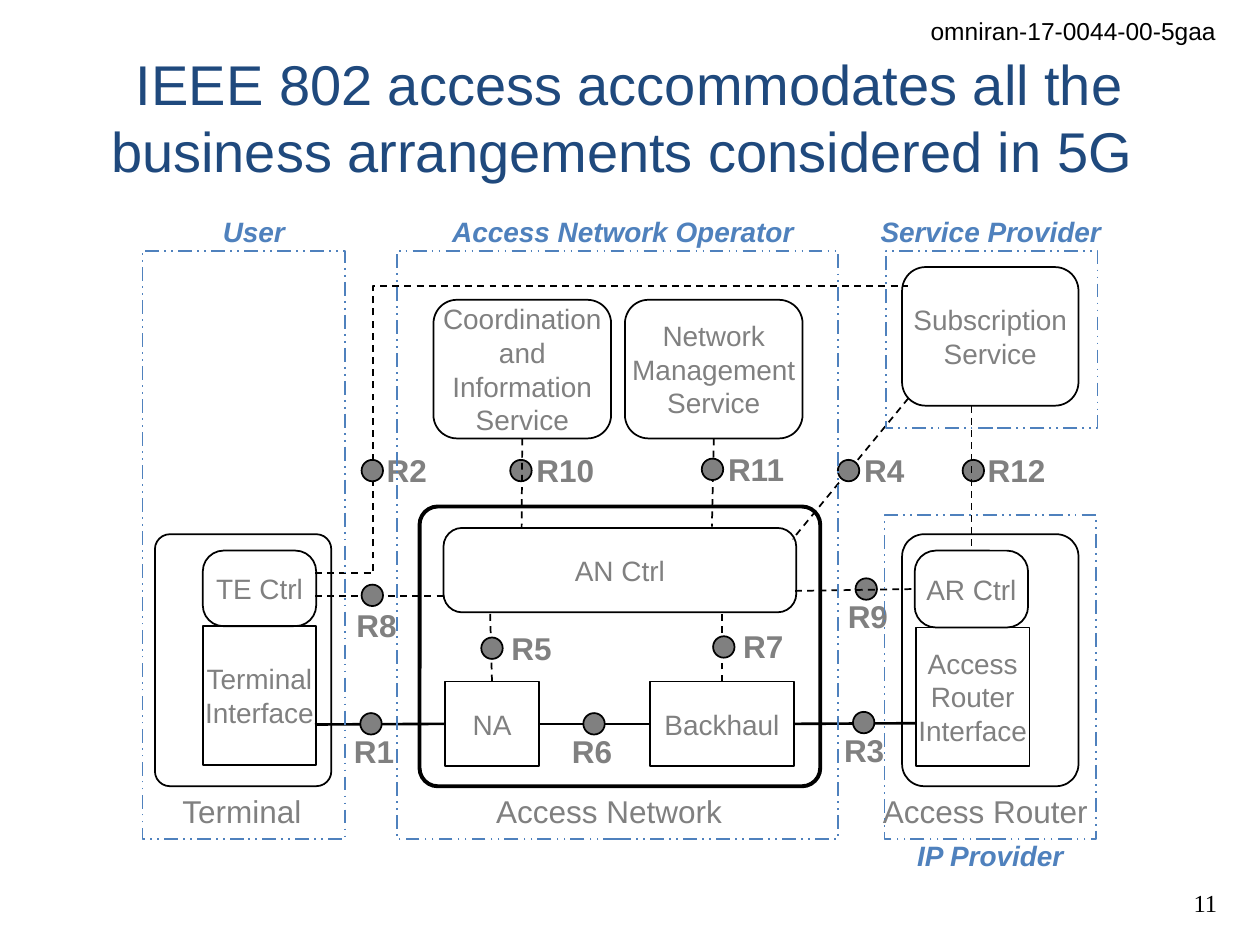
from dataclasses import dataclass
from typing import Optional

from lxml.etree import SubElement
from pptx import Presentation
from pptx.dml.color import RGBColor
from pptx.enum.dml import MSO_LINE_DASH_STYLE as Dash
from pptx.enum.shapes import MSO_CONNECTOR as Wire, MSO_SHAPE as Form
from pptx.enum.text import MSO_ANCHOR as Anchor, PP_ALIGN as Align
from pptx.oxml.ns import qn
from pptx.util import Pt

SCALE = 9144  # EMU per px, 100 px to the inch
BLACK = RGBColor(0x00, 0x00, 0x00)
GREY = RGBColor(0x80, 0x80, 0x80)
BLUE = RGBColor(0x4F, 0x81, 0xBD)
NAVY = RGBColor(0x1F, 0x49, 0x7D)
TOP, LEFT, BOTTOM, RIGHT = range(4)
DOT_SIZE = 17
LABEL_HEIGHT = 40

CAPTION = {"size": Pt(18), "color": GREY}
POINT_NAME = {**CAPTION, "bold": True}
NODE_TEXT = {"size": Pt(16), "color": GREY}
DOMAIN_NAME = {"size": Pt(16), "color": BLUE, "bold": True, "italic": True}
MARGINAL = {"size": Pt(14), "color": BLACK}


@dataclass
class Node:
    name: str
    area: tuple[int, int, int, int]
    corner: float = 0.17
    text: str = ""
    weight: float = 1


@dataclass
class Domain:
    name: str
    name_area: tuple[int, int, int, int]
    area: tuple[int, int, int, int]


@dataclass
class End:
    at: tuple[int, int]
    node: str = ""
    side: int = TOP


@dataclass
class Point:
    """A reference point: its dot, its name and the link it sits on."""
    name: str
    dot: tuple[int, int]
    label: tuple[int, int]
    start: End
    end: End
    solid: bool = False
    in_front: bool = False
    bend: Optional[float] = None


NODES = [
    Node("terminal", (123, 424, 140, 200), 0.085),
    Node("network", (333, 402, 318, 222), 0.065, weight=2.25),
    Node("router", (716, 424, 140, 200), 0.125),
    Node("terminal interface", (161, 497, 90, 110), 0, "Terminal\vInterface"),
    Node("coordination", (344, 238, 141, 110), text="Coordination and Information\vService"),
    Node("management", (496, 238, 141, 110), text="Network\vManagement\vService"),
    Node("subscription", (716, 212, 140, 110), text="Subscription\nService"),
    Node("an", (352, 419, 280, 67), 0.221, "AN Ctrl"),
    Node("te", (161, 437, 90, 60), 0.275, "TE Ctrl"),
    Node("ar", (726, 437, 90, 61), 0.275, "AR Ctrl"),
    Node("router interface", (727, 498, 90, 110), 0, "Access Router\vInterface"),
    Node("na", (353, 541, 75, 67), 0, "NA"),
    Node("backhaul", (516, 541, 114, 67), 0, "Backhaul"),
]

POINTS = [
    Point("R1", (286, 566), (271, 576), End((250, 575)), End((353, 574), "na", LEFT), solid=True),
    Point("R2", (287, 365), (297, 353), End((250, 455)), End((721, 227)), bend=0.098),
    Point("R3", (677, 565), (660, 575), End((630, 574), "backhaul", RIGHT), End((727, 574)),
          solid=True),
    Point("R4", (665, 365), (676, 353), End((721, 316)), End((629, 428))),
    Point("R5", (382, 506), (396, 494), End((390, 541), "na", TOP), End((389, 486))),
    Point("R6", (463, 566), (444, 576), End((428, 574), "na", RIGHT),
          End((516, 574), "backhaul", LEFT), solid=True),
    Point("R7", (566, 505), (580, 493), End((573, 541), "backhaul", TOP), End((573, 486))),
    Point("R8", (287, 464), (273, 476), End((250, 473)), End((352, 473))),
    Point("R9", (679, 459), (663, 469), End((631, 469)), End((726, 467), "ar", LEFT),
          in_front=True),
    Point("R10", (405, 365), (416, 353), End((415, 348), "coordination", BOTTOM),
          End((414, 419)), in_front=True),
    Point("R11", (557, 364), (568, 352), End((567, 348), "management", BOTTOM), End((565, 418))),
    Point("R12", (764, 365), (774, 353), End((771, 322)), End((771, 437), "ar", TOP),
          in_front=True),
]

DOMAINS = [
    Domain("User", (167, 165, 70, 37), (113, 199, 161, 467)),
    Domain("Access Network Operator", (349, 165, 295, 37), (315, 199, 350, 467)),
    Domain("Service Provider", (689, 165, 197, 37), (703, 199, 168, 141)),
    Domain("IP Provider", (718, 661, 138, 37), (702, 409, 168, 257)),
]

CAPTIONS = [
    ("Terminal", (135, 624, 116, LABEL_HEIGHT)),
    ("Access Network", (384, 624, 203, LABEL_HEIGHT)),
    ("Access Router", (691, 624, 184, LABEL_HEIGHT)),
]


def emu(*lengths: int) -> list[int]:
    return [length * SCALE for length in lengths]


def write(frame, text: str, style: dict, align=Align.LEFT, font_name="Arial") -> None:
    frame.text = text
    for para in frame.paragraphs:
        para.alignment = align
        for span in para.runs:
            span.font.name = font_name
            for key, value in style.items():
                if key == "color":
                    span.font.color.rgb = value
                else:
                    setattr(span.font, key, value)


def add_text(page, text: str, area: tuple, style: dict, wrap=False, **options):
    box = page.shapes.add_textbox(*emu(*area))
    box.text_frame.word_wrap = wrap
    write(box.text_frame, text, style, **options)
    return box


def add_outline(page, form, area: tuple, color=BLACK, weight: float = 1):
    """Add an unfilled preset shape."""
    shape = page.shapes.add_shape(form, *emu(*area))
    shape.shadow.inherit = False
    shape.fill.background()
    shape.line.color.rgb = color
    shape.line.width = Pt(weight)
    return shape


def add_node(page, node: Node):
    box = add_outline(page, Form.ROUNDED_RECTANGLE, node.area, weight=node.weight)
    box.adjustments[0] = node.corner
    if node.text:
        frame = box.text_frame
        layout = {"word_wrap": True, "vertical_anchor": Anchor.MIDDLE,
                  "margin_left": 0, "margin_right": 0}
        for key, value in layout.items():
            setattr(frame, key, value)
        write(frame, node.text, NODE_TEXT, Align.CENTER)
    return box


def add_link(page, point: Point, boxes: dict) -> None:
    kind = Wire.STRAIGHT if point.bend is None else Wire.ELBOW
    link = page.shapes.add_connector(kind, *emu(*point.start.at, *point.end.at))
    for end, connect in ((point.start, link.begin_connect), (point.end, link.end_connect)):
        if end.node:
            connect(boxes[end.node], end.side)
    link.line.color.rgb = BLACK
    link.line.width = Pt(1.5 if point.solid else 1)
    if not point.solid:
        link.line.dash_style = Dash.DASH
    properties = link._element.spPr
    SubElement(properties, qn("a:effectLst"))
    if point.bend is not None:
        guides = properties.find(qn("a:prstGeom")).get_or_add_avLst()
        SubElement(guides, qn("a:gd"), name="adj1", fmla=f"val {round(point.bend * 100000)}")


def add_point(page, point: Point, boxes: dict) -> None:
    if not point.in_front:
        add_link(page, point, boxes)
    width = 52 if len(point.name) == 2 else 66
    add_text(page, point.name, (*point.label, width, LABEL_HEIGHT), POINT_NAME)
    dot = add_outline(page, Form.OVAL, (*point.dot, DOT_SIZE, DOT_SIZE))
    dot.fill.solid()
    dot.fill.fore_color.rgb = GREY
    if point.in_front:
        add_link(page, point, boxes)


def add_domain(page, domain: Domain) -> None:
    border = add_outline(page, Form.RECTANGLE, domain.area, BLUE)
    border.line.dash_style = Dash.DASH_DOT_DOT
    add_text(page, domain.name, domain.name_area, DOMAIN_NAME)


def main() -> None:
    deck = Presentation()
    deck.slide_width, deck.slide_height = emu(1000, 750)
    page = deck.slides.add_slide(deck.slide_layouts[6])
    add_text(page, "omniran-17-0044-00-5gaa", (720, 8, 255, 34), MARGINAL, align=Align.RIGHT)
    add_text(page, "11", (933, 700, 43, 34), MARGINAL, align=Align.RIGHT,
             font_name="Times New Roman")
    title = add_text(
        page, "IEEE 802 access accommodates all the business arrangements considered in 5G ",
        (50, 30, 900, 125), {"size": Pt(32), "color": NAVY}, wrap=True, align=Align.CENTER)
    title.text_frame.vertical_anchor = Anchor.MIDDLE
    boxes = {node.name: add_node(page, node) for node in NODES}
    for text, area in CAPTIONS:
        add_text(page, text, area, CAPTION)
    for point in POINTS:
        add_point(page, point, boxes)
    for domain in DOMAINS:
        add_domain(page, domain)
    deck.save("out.pptx")


if __name__ == "__main__":
    main()
